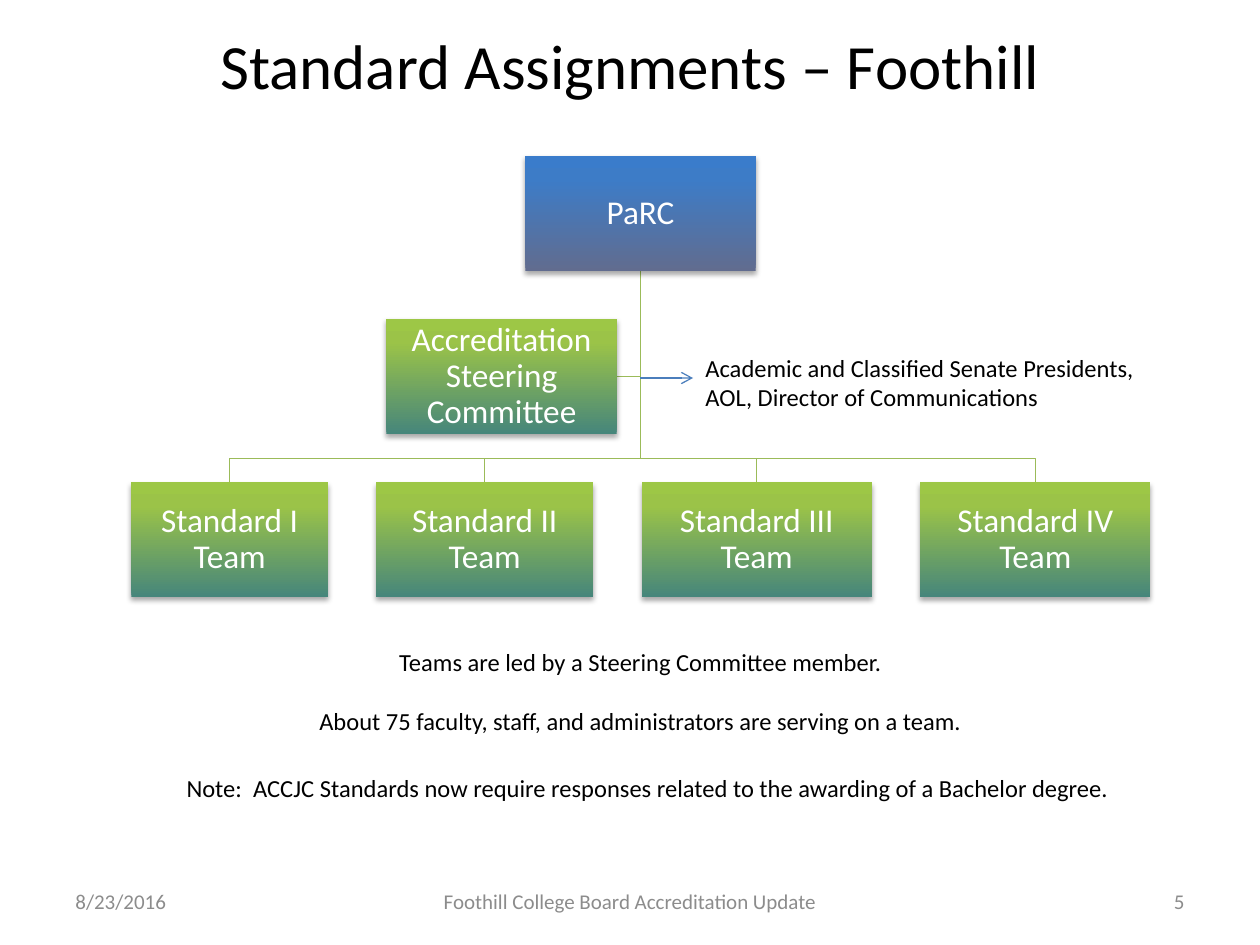
from copy import deepcopy

from pptx import Presentation
from pptx.dml.color import RGBColor
from pptx.enum.shapes import MSO_CONNECTOR as Link, MSO_SHAPE as Preset
from pptx.enum.text import MSO_ANCHOR as Anchor, PP_ALIGN as Align
from pptx.oxml import parse_xml
from pptx.oxml.ns import nsdecls, qn
from pptx.util import Pt

BLACK = RGBColor(0x00, 0x00, 0x00)
WHITE = RGBColor(0xFF, 0xFF, 0xFF)
GREY = RGBColor(0x8C, 0x8C, 0x8C)
BRANCH = RGBColor(0x9B, 0xBB, 0x59)
ARROW = RGBColor(0x4B, 0x7E, 0xBC)
# Gradient stops, from the bottom of a box to its top
BLUES = [(0, RGBColor(0x61, 0x6C, 0x8F)), (0.8, RGBColor(0x3D, 0x7C, 0xC7)),
         (1, RGBColor(0x3A, 0x7C, 0xCB))]
GREENS = [(0, RGBColor(0x46, 0x86, 0x7B)), (0.8, RGBColor(0x9B, 0xC3, 0x48)),
          (1, RGBColor(0x9D, 0xC7, 0x46))]

# Content: teams as (label, box width)
COUNCIL = "PaRC"
COMMITTEE = "Accreditation Steering Committee"
TEAMS = [("Standard I Team", 112.4), ("Standard II Team", 124),
         ("Standard III Team", 131.6), ("Standard IV Team", 131.6)]

# Text boxes: paragraphs, (left, top, width, height), format
NOTE = dict(size=14, color=BLACK, align=Align.LEFT, anchor=Anchor.TOP)
CENTRED = dict(NOTE, align=Align.CENTER, gap=17)
FOOTER = dict(size=12, color=GREY, anchor=Anchor.MIDDLE)
TEXTS = [
    (["Standard Assignments – Foothill"], (36, 18, 648, 38),
     dict(size=36, color=BLACK, align=Align.CENTER, anchor=Anchor.MIDDLE)),
    (["Academic and Classified Senate Presidents,",
      "AOL, Director of Communications"], (396, 198, 276, 41), NOTE),
    (["Teams are led by a Steering Committee member.",
      "About 75 faculty, staff, and administrators are serving on a team."],
     (174, 366, 384, 58), CENTRED),
    (["Note:  ACCJC Standards now require responses related to the awarding "
      "of a Bachelor degree."], (99.5, 438, 552, 24.2), NOTE),
    (["8/23/2016"], (36, 500.5, 168, 28.75), dict(FOOTER, align=Align.LEFT)),
    (["Foothill College Board Accreditation Update"],
     (246, 500.5, 228, 28.75), dict(FOOTER, align=Align.CENTER)),
    (["5"], (516, 500.5, 168, 28.75), dict(FOOTER, align=Align.RIGHT)),
]

# Chart geometry
TRUNK = 366
BOX_W, BOX_H = 131.6, 65.8
COUNCIL_TOP, COMMITTEE_TOP, TEAM_TOP = 89.2, 182.3, 275.6
COMMITTEE_LEFT = 220.8
TEAM_LEFT, TEAM_GAP = 75, 27.6
BUS = 262
ARROW_Y, ARROW_END = 216, 396


def write(frame, lines, size, color, align, anchor, gap=0, spacing=None):
    frame.word_wrap = True
    frame.vertical_anchor = anchor
    for index, line in enumerate(lines):
        para = frame.paragraphs[0] if index == 0 else frame.add_paragraph()
        para.alignment = align
        para.line_spacing = spacing
        if index and gap:
            para.space_before = Pt(gap)
        span = para.add_run()
        span.text = line
        for name, value in dict(name="Calibri", size=Pt(size)).items():
            setattr(span.font, name, value)
        span.font.color.rgb = color


def add_branch(page, points):
    (start_x, start_y), *rest = [(Pt(x), Pt(y)) for x, y in points]
    builder = page.shapes.build_freeform(start_x, start_y)
    builder.add_line_segments(rest, close=False)
    branch = builder.convert_to_shape()
    branch.shadow.inherit = False
    branch.fill.background()
    branch.line.color.rgb = BRANCH
    branch.line.width = Pt(0.75)


def add_box(page, label, left, top, width, stops):
    box = page.shapes.add_shape(
        Preset.RECTANGLE, Pt(left), Pt(top), Pt(width), Pt(BOX_H))
    box.line.fill.background()
    # Three-stop vertical gradient
    box.fill.gradient()
    box.fill.gradient_angle = 90
    props = box._element.spPr
    stop_list = props.find(".//" + qn("a:gsLst"))
    stop_list.append(deepcopy(stop_list[-1]))
    for stop, (position, color) in zip(box.fill.gradient_stops, stops):
        stop.position = position
        stop.color.rgb = color
    # Soft shadow straight below
    box.shadow.inherit = False
    props.find(qn("a:effectLst")).append(parse_xml(
        f'<a:outerShdw {nsdecls("a")} blurRad="{Pt(3.1)}" dist="{Pt(1.8)}" '
        'dir="5400000" rotWithShape="0"><a:srgbClr val="000000">'
        '<a:alpha val="35000"/></a:srgbClr></a:outerShdw>'))
    frame = box.text_frame
    for side in ("left", "top", "right", "bottom"):
        setattr(frame, f"margin_{side}", Pt(0.95))
    write(frame, [label], 19, WHITE, Align.CENTER, Anchor.MIDDLE, spacing=0.9)


def add_arrow(page):
    arrow = page.shapes.add_connector(
        Link.STRAIGHT, Pt(TRUNK), Pt(ARROW_Y), Pt(ARROW_END), Pt(ARROW_Y))
    arrow.line.color.rgb = ARROW
    arrow.line.width = Pt(0.75)
    arrow.line._get_or_add_ln().append(
        parse_xml(f'<a:tailEnd {nsdecls("a")} type="arrow"/>'))
    arrow._element.spPr.append(parse_xml(f'<a:effectLst {nsdecls("a")}/>'))


def main():
    deck = Presentation()
    deck.slide_width, deck.slide_height = Pt(720), Pt(540)
    page = deck.slides.add_slide(deck.slide_layouts[6])

    # Team boxes in a row with equal gaps
    teams, left = [], TEAM_LEFT
    for label, width in TEAMS:
        teams.append((label, left, width))
        left += width + TEAM_GAP

    # Branches from the council, behind the boxes
    root = (TRUNK, COUNCIL_TOP + BOX_H)
    middle = COMMITTEE_TOP + BOX_H / 2
    add_branch(page, [root, (TRUNK, middle), (COMMITTEE_LEFT + BOX_W, middle)])
    for _, left, width in teams:
        center = left + width / 2
        add_branch(page, [root, (TRUNK, BUS), (center, BUS), (center, TEAM_TOP)])

    # Boxes
    add_box(page, COUNCIL, TRUNK - BOX_W / 2, COUNCIL_TOP, BOX_W, BLUES)
    for label, left, width in teams:
        add_box(page, label, left, TEAM_TOP, width, GREENS)
    add_box(page, COMMITTEE, COMMITTEE_LEFT, COMMITTEE_TOP, BOX_W, GREENS)

    # Arrow to the member list, then title, notes and footer
    add_arrow(page)
    for lines, place, style in TEXTS:
        area = page.shapes.add_textbox(*map(Pt, place))
        write(area.text_frame, lines, **style)

    deck.save("out.pptx")


if __name__ == "__main__":
    main()
